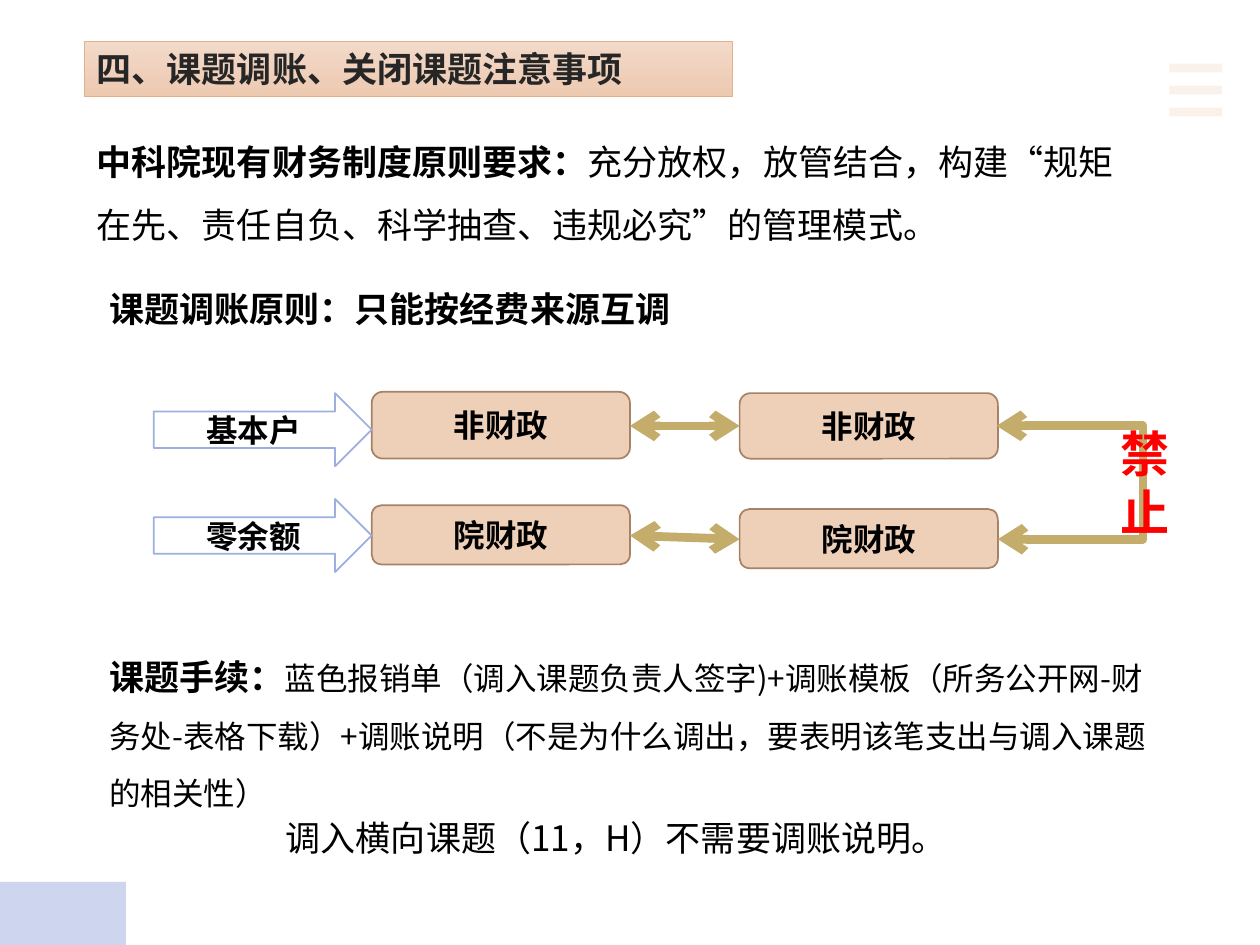
from lxml.etree import SubElement
from pptx import Presentation
from pptx.dml.color import RGBColor
from pptx.enum.shapes import MSO_CONNECTOR as LINK, MSO_SHAPE as KIND
from pptx.enum.text import MSO_ANCHOR, PP_ALIGN
from pptx.oxml.ns import qn
from pptx.util import Inches, Pt

SANS, ARIAL = "Noto Sans CJK SC", "Arial"
TAN, GOLD, BLUE = "E2B08A", "C4AC6A", "9FAEE0"
BOLD = {"size": Pt(20), "bold": True, "name": SANS}
PLAIN = {**BOLD, "bold": False}
SMALL = {**PLAIN, "size": Pt(18)}
LABEL = {"size": Pt(18), "bold": True, "name": ARIAL}
ALERT = {**LABEL, "size": Pt(28)}

TITLE = "四、课题调账、关闭课题注意事项"
NOTES = [
    ((0.67, 0.9, 8.5, 1.45), 1.5, [
        ("中科院现有财务制度原则要求：", BOLD),
        ("充分放权，放管结合，构建“规矩在先、责任自负、科学抽查、违规必究”的管理模式。", PLAIN)]),
    ((0.77, 2.23, 8.5, 0.44), 1, [("课题调账原则：只能按经费来源互调", BOLD)]),
    ((0.77, 4.99, 8.5, 1.51), 1.5, [
        ("课题手续：", BOLD),
        ("蓝色报销单（调入课题负责人签字)+调账模板（所务公开网-财务处-表格下载）"
         "+调账说明（不是为什么调出，要表明该笔支出与调入课题的相关性）", SMALL)]),
    ((2.17, 6.43, 5.71, 0.44), 1, [("调入横向课题（11，H）不需要调账说明。", PLAIN)]),
]
FUNDS = [
    ("非财政", [(2.95, 3.11, 2.05, 0.53), (5.87, 3.12, 2.05, 0.52)]),
    ("院财政", [(2.95, 4.01, 2.05, 0.47), (5.87, 4.04, 2.05, 0.47)]),
]
SOURCES = [("基本户", 3.12), ("零余额", 3.96)]
SWAPS = [(5, 3.38, 5.87, 3.38), (5, 4.25, 5.87, 4.28)]
BAN = (7.91, 3.38, 7.92, 4.28)
BEND = 9.09
ARC = [(0.13, 7.44), (0.16, 7.04), (0.41, 6.73), (0.72, 6.73)]


def rgb(code):
    return RGBColor.from_string(code)


def fade(item, part):
    for tint in item._element.spPr.iter(qn("a:srgbClr")):
        SubElement(tint, qn("a:alpha"), val=str(part * 1000))


def write(frame, runs, color="000000", space=1, align=PP_ALIGN.LEFT):
    frame.word_wrap = True
    para = frame.paragraphs[0]
    para.alignment, para.line_spacing = align, space
    for text, style in runs:
        run = para.add_run()
        run.text = text
        for key, value in style.items():
            setattr(run.font, key, value)
        run.font.color.rgb = rgb(color)
        SubElement(run._r.get_or_add_rPr(), qn("a:ea"), typeface=style["name"])


def shape(kind, box, fill=None, line=None, width=1):
    item = slide.shapes.add_shape(kind, *map(Inches, box))
    item.shadow.inherit = False
    if fill:
        item.fill.solid()
        item.fill.fore_color.rgb = rgb(fill)
    else:
        item.fill.background()
    if line:
        item.line.color.rgb = rgb(line)
        item.line.width = Pt(width)
    else:
        item.line.fill.background()
    return item


def label(item, text, style=LABEL, color="000000"):
    item.text_frame.vertical_anchor = MSO_ANCHOR.MIDDLE
    write(item.text_frame, [(text, style)], color, align=PP_ALIGN.CENTER)


def link(ends, color, kind=LINK.STRAIGHT, heads=True):
    item = slide.shapes.add_connector(kind, *map(Inches, ends))
    item.line.color.rgb = rgb(color)
    item.line.width = Pt(5)
    if heads:
        for tag in ("a:headEnd", "a:tailEnd"):
            SubElement(item.line._get_or_add_ln(), qn(tag), type="arrow")
    SubElement(item._element.spPr, qn("a:effectLst"))
    return item


def curve(step):
    t, u = step, 1 - step
    parts = (u ** 3, 3 * u * u * t, 3 * u * t * t, t ** 3)
    return tuple(sum(w * p[axis] for w, p in zip(parts, ARC)) for axis in (0, 1))


deck = Presentation()
deck.slide_width, deck.slide_height = Inches(10), Inches(7.5)
slide = deck.slides.add_slide(deck.slide_layouts[6])

for row in range(3):
    y = 0.54 + row * 0.175
    fade(link((9.28, y, 9.7, y), TAN, heads=False), 17)

left = [curve(i / 24) for i in range(25)]
right = [(1.44 - x, y) for x, y in reversed(left)]
dome = [(0.13, 7.5)] + left + right[1:] + [(1.31, 7.5)]
pen = slide.shapes.build_freeform(*dome[0], scale=Inches(1))
pen.add_line_segments(dome[1:], close=True)
hill = pen.convert_to_shape()
hill.shadow.inherit = False
hill.fill.solid()
hill.fill.fore_color.rgb = rgb(BLUE)
hill.line.fill.background()
fade(hill, 50)

bar = shape(KIND.RECTANGLE, (0.67, 0.33, 5.14, 0.44), None, TAN, 0.5)
bar.fill.gradient()
bar.fill.gradient_angle = 270
for stop, color in zip(bar.fill.gradient_stops, ("F2D9C9", "EDC9B0")):
    stop.color.rgb = rgb(color)
bar.text_frame.vertical_anchor = MSO_ANCHOR.TOP
write(bar.text_frame, [(TITLE, BOLD)], "262626")

for box, space, runs in NOTES:
    note = slide.shapes.add_textbox(*map(Inches, box))
    write(note.text_frame, runs, space=space)

for text, boxes in FUNDS:
    for box in boxes:
        label(shape(KIND.ROUNDED_RECTANGLE, box, "EED0B9", "A78266"), text)
for ends in SWAPS:
    link(ends, GOLD)
for text, top in SOURCES:
    label(shape(KIND.RIGHT_ARROW, (1.22, top, 1.73, 0.58), "FFFFFF", BLUE), text)

ban = link(BAN, GOLD, LINK.ELBOW)
ratio = round((BEND - BAN[0]) / (BAN[2] - BAN[0]) * 100000)
guides = ban._element.spPr.find(qn("a:prstGeom")).get_or_add_avLst()
SubElement(guides, qn("a:gd"), name="adj1", fmla=f"val {ratio}")
label(shape(KIND.OVAL, (8.54, 3.36, 1.1, 0.94)), "禁止", ALERT, "FF0000")

deck.save("out.pptx")
